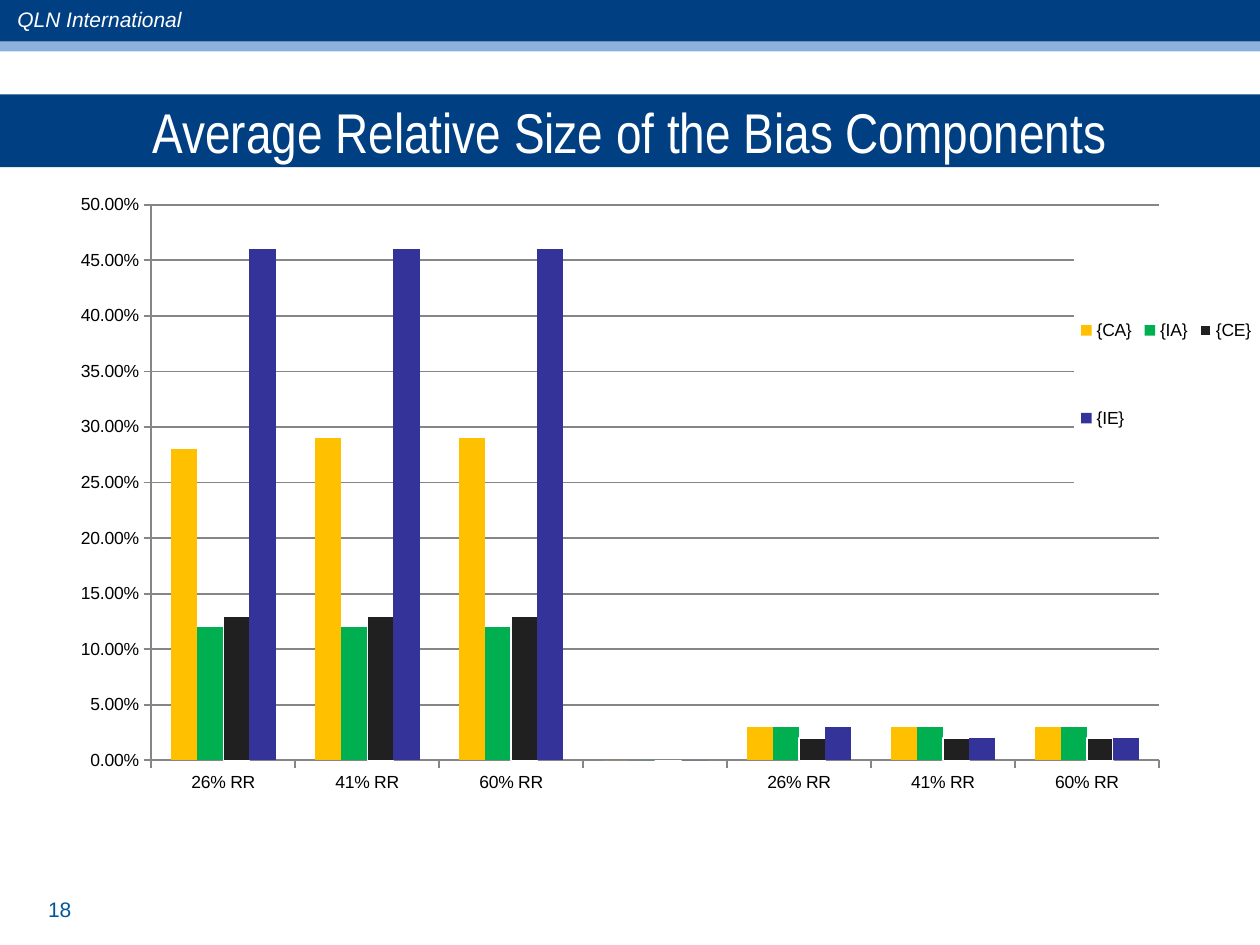
from typing import NamedTuple

from lxml import etree
from pptx import Presentation
from pptx import util as u
from pptx.chart.data import CategoryChartData
from pptx.dml.color import RGBColor
from pptx.enum import chart as ch, shapes, text
from pptx.oxml import parse_xml
from pptx.oxml.ns import nsdecls, qn

NAVY = RGBColor(0x00, 0x3F, 0x82)
SKY = RGBColor(0x8E, 0xB0, 0xDD)
BLUE = RGBColor(0x00, 0x56, 0x9A)
WHITE = RGBColor(0xFF, 0xFF, 0xFF)
BLACK = RGBColor(0x00, 0x00, 0x00)
GRAY = RGBColor(0x86, 0x86, 0x86)
AMBER = RGBColor(0xFF, 0xC0, 0x00)
GREEN = RGBColor(0x00, 0xB0, 0x50)
CHARCOAL = RGBColor(0x20, 0x20, 0x20)
INDIGO = RGBColor(0x33, 0x33, 0x99)


class Box(NamedTuple):
    """Position and size in centimetres."""
    left: float
    top: float
    width: float
    height: float

    def lengths(self) -> list:
        return [u.Cm(v) for v in self]


class Component(NamedTuple):
    name: str
    color: RGBColor
    values: tuple


RATES = ("26% RR", "41% RR", "60% RR")
CATEGORIES = (*RATES, "", *RATES)
COMPONENTS = (
    Component("{CA}", AMBER, (0.28, 0.29, 0.29, 0, 0.03, 0.03, 0.03)),
    Component("{IA}", GREEN, (0.12, 0.12, 0.12, 0, 0.03, 0.03, 0.03)),
    Component("{CE}", CHARCOAL, (0.13, 0.13, 0.13, 0, 0.02, 0.02, 0.02)),
    Component("{IE}", INDIGO, (0.46, 0.46, 0.46, 0, 0.03, 0.02, 0.02)),
)


def add_band(slide, box: Box, color: RGBColor) -> None:
    sp = slide.shapes.add_shape(shapes.MSO_SHAPE.RECTANGLE, *box.lengths())
    sp.shadow.inherit = False
    sp.fill.solid()
    sp.fill.fore_color.rgb = color
    sp.line.fill.background()


def add_run(p, words: str, size: float, color: RGBColor,
            font: str = "Arial", italic: bool = False) -> None:
    r = p.add_run()
    r.text = words
    r.font.name = font
    r.font.size = u.Pt(size)
    r.font.color.rgb = color
    r.font.italic = italic


def add_label(slide, box: Box, words: str, color: RGBColor, align,
              italic: bool = False) -> None:
    tf = slide.shapes.add_textbox(*box.lengths()).text_frame
    tf.word_wrap = True
    p = tf.paragraphs[0]
    p.alignment = align
    add_run(p, words, 12, color, italic=italic)


def set_layout(parent, index: int, x: float, y: float, w: float, h: float,
               inner: bool = False) -> None:
    """Place a chart part by fractions of the chart area."""
    for old in parent.findall(qn("c:layout")):
        parent.remove(old)
    layout = parse_xml(f"<c:layout {nsdecls('c')}><c:manualLayout/></c:layout>")
    settings = [("layoutTarget", "inner")] if inner else []
    settings += [("xMode", "edge"), ("yMode", "edge"),
                 ("x", x), ("y", y), ("w", w), ("h", h)]
    for tag, value in settings:
        etree.SubElement(layout[0], qn(f"c:{tag}")).set("val", str(value))
    parent.insert(index, layout)


def style_line(line) -> None:
    line.color.rgb = GRAY
    line.width = u.Pt(1)


def style_axis(axis) -> None:
    axis.major_tick_mark = ch.XL_TICK_MARK.OUTSIDE
    axis.minor_tick_mark = ch.XL_TICK_MARK.NONE
    style_line(axis.format.line)


def add_bias_chart(slide, box: Box) -> None:
    data = CategoryChartData(number_format="0.00%")
    data.categories = CATEGORIES
    for c in COMPONENTS:
        data.add_series(c.name, c.values)
    chart = slide.shapes.add_chart(
        ch.XL_CHART_TYPE.COLUMN_CLUSTERED, *box.lengths(), data).chart
    chart.has_title = False
    chart.font.name = "Arial"
    chart.font.size = u.Pt(10)
    chart.font.color.rgb = BLACK

    # Columns
    plot = chart.plots[0]
    plot.vary_by_categories = False
    plot.gap_width = 150
    plot.overlap = 0
    for series, c in zip(plot.series, COMPONENTS):
        series.invert_if_negative = False
        series.format.fill.solid()
        series.format.fill.fore_color.rgb = c.color
        if c.color == CHARCOAL:
            series.format.line.color.rgb = WHITE
            series.format.line.width = u.Pt(0.75)

    # Axes
    style_axis(chart.category_axis)
    axis = chart.value_axis
    style_axis(axis)
    axis.minimum_scale, axis.maximum_scale, axis.major_unit = 0, 0.5, 0.05
    axis.tick_labels.number_format = "0.00%"
    axis.tick_labels.number_format_is_linked = False
    axis.has_major_gridlines = True
    style_line(axis.major_gridlines.format.line)
    plot_area = chart.element.find(".//" + qn("c:plotArea"))
    set_layout(plot_area, 0, 0.073, 0.044, 0.843, 0.882, inner=True)

    # White legend laid over the right end of the gridlines
    chart.has_legend = True
    chart.legend.position = ch.XL_LEGEND_POSITION.RIGHT
    chart.legend.include_in_layout = False
    legend = chart.element.find(".//" + qn("c:legend"))
    set_layout(legend, 1, 0.845, 0.12, 0.154, 0.386)
    legend.find(qn("c:overlay")).addnext(parse_xml(
        f"<c:spPr {nsdecls('c', 'a')}><a:solidFill>"
        f'<a:srgbClr val="{WHITE}"/></a:solidFill></c:spPr>'))


def main() -> None:
    prs = Presentation()
    prs.slide_width, prs.slide_height = u.Cm(25.4), u.Cm(19.05)
    s = prs.slides.add_slide(prs.slide_layouts[5])

    # Header bands and page number
    add_band(s, Box(0, 0, 25.4, 0.84), NAVY)
    add_label(s, Box(0.1, 0, 4, 0.76), "QLN International", WHITE,
              text.PP_ALIGN.LEFT, italic=True)
    add_band(s, Box(0, 0.84, 25.4, 0.2), SKY)
    add_label(s, Box(0.62, 17.95, 1.07, 0.69), "18", BLUE,
              text.PP_ALIGN.RIGHT)

    # Title
    title = s.shapes.title
    title.left, title.top, title.width, title.height = Box(
        0, 1.9, 25.4, 1.47).lengths()
    title.fill.solid()
    title.fill.fore_color.rgb = NAVY
    tf = title.text_frame
    tf.auto_size = text.MSO_AUTO_SIZE.NONE
    tf.vertical_anchor = text.MSO_ANCHOR.MIDDLE
    p = tf.paragraphs[0]
    p.alignment = text.PP_ALIGN.CENTER
    add_run(p, "Average Relative Size of the Bias Components", 32, WHITE,
            font="Arial Narrow")

    add_bias_chart(s, Box(1.29, 3.57, 24.1, 12.7))
    prs.save("out.pptx")


if __name__ == "__main__":
    main()
